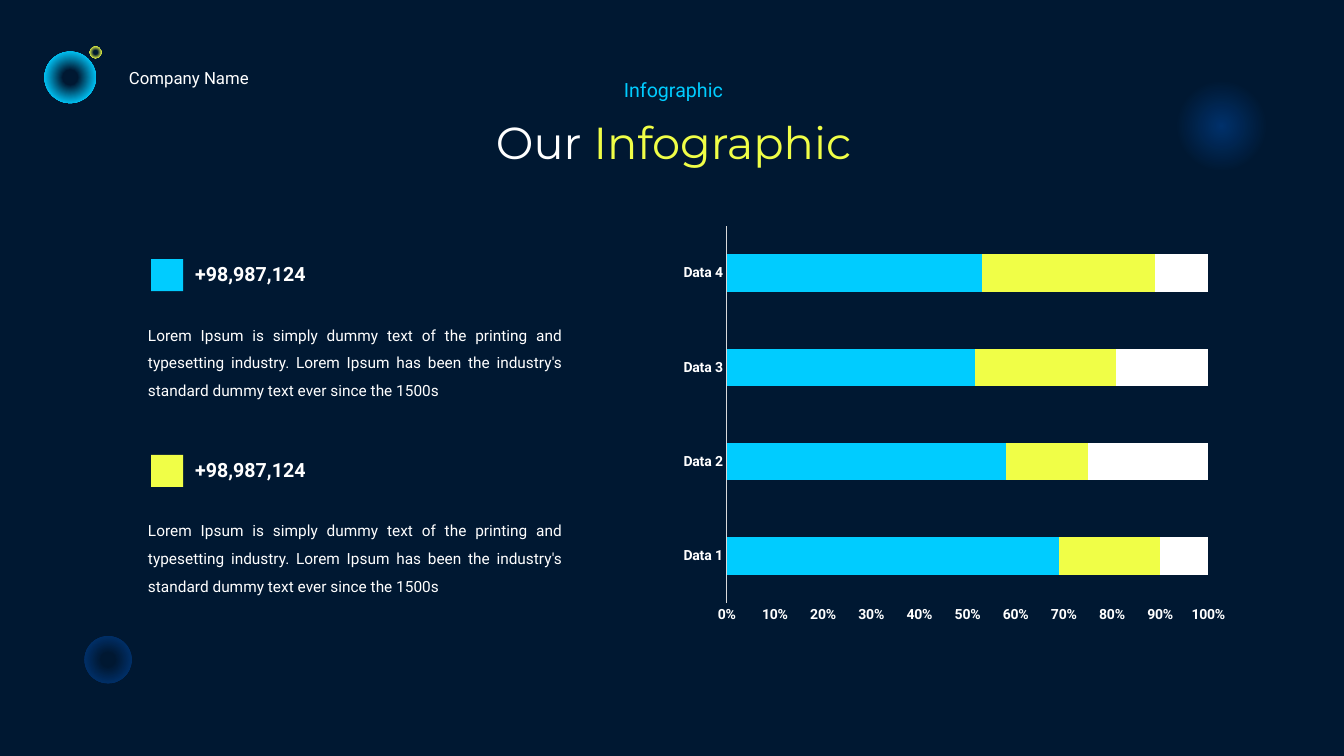
"""Builds the infographic slide with two key figures and a stacked bar chart."""
from pptx import Presentation
from pptx.chart.data import CategoryChartData
from pptx.dml.color import RGBColor
from pptx.enum.chart import XL_CHART_TYPE as ChartType, XL_TICK_MARK as TickMark
from pptx.enum.shapes import MSO_SHAPE as Shape
from pptx.enum.text import MSO_AUTO_SIZE as AutoSize, PP_ALIGN as Align
from pptx.oxml import parse_xml
from pptx.oxml.ns import nsdecls
from pptx.util import Cm, Pt

NAVY = RGBColor(0x00, 0x18, 0x32)
BLUE = RGBColor(0x00, 0x31, 0x6B)
CYAN = RGBColor(0x00, 0xCC, 0xFF)
YELLOW = RGBColor(0xF0, 0xFE, 0x47)
WHITE = RGBColor(0xFF, 0xFF, 0xFF)
GREY = RGBColor(0xD9, 0xD9, 0xD9)

FIGURE = "+98,987,124"
BLURB = (
    "Lorem Ipsum is simply dummy text of the printing and typesetting industry. "
    "Lorem Ipsum has been the industry's standard dummy text ever since the 1500s"
)
SERIES = [
    ("Series 1", (44, 21, 34, 33), CYAN),
    ("Series 2", (25, 37, 17, 20), CYAN),
    ("Series 3", (21, 17, 29, 36), YELLOW),
    ("Series 4", (10, 25, 19, 11), WHITE),
]


def write(paragraph, text, *, size, color=WHITE, font="Roboto", bold=False):
    """Add a formatted run to a paragraph."""
    run = paragraph.add_run()
    run.text = text
    run.font.size = Pt(size)
    run.font.name = font
    run.font.bold = bold
    run.font.color.rgb = color


class SlideBuilder:
    """Holds the current slide and draws its elements in one style."""

    def __init__(self, slide):
        self.slide = slide
        background = slide.background.fill
        background.solid()
        background.fore_color.rgb = NAVY

    def _shape(self, kind, left, top, side):
        shape = self.slide.shapes.add_shape(kind, Cm(left), Cm(top), Cm(side), Cm(side))
        shape.shadow.inherit = False
        shape.line.fill.background()
        return shape

    def swatch(self, left, top, side, color):
        """Draw a plain coloured square."""
        square = self._shape(Shape.RECTANGLE, left, top, side)
        square.fill.solid()
        square.fill.fore_color.rgb = color

    def orb(self, left, top, side, stops):
        """Draw a circle with a radial gradient of (percent, colour) stops."""
        circle = self._shape(Shape.OVAL, left, top, side)
        stop_xml = "".join(
            f'<a:gs pos="{percent * 1000}"><a:srgbClr val="{color}"/></a:gs>'
            for percent, color in stops
        )
        gradient = parse_xml(
            f'<a:gradFill {nsdecls("a")} rotWithShape="1"><a:gsLst>{stop_xml}</a:gsLst>'
            '<a:path path="circle"><a:fillToRect l="50000" t="50000" r="50000" b="50000"/>'
            "</a:path></a:gradFill>"
        )
        circle.element.spPr.insert(2, gradient)

    def text(self, left, top, width, height, *pieces, align=Align.LEFT, spacing=None, **style):
        """Place one paragraph of (text, colour) pieces."""
        box = self.slide.shapes.add_textbox(Cm(left), Cm(top), Cm(width), Cm(height))
        frame = box.text_frame
        frame.word_wrap = True
        frame.auto_size = AutoSize.SHAPE_TO_FIT_TEXT
        paragraph = frame.paragraphs[0]
        paragraph.alignment = align
        paragraph.line_spacing = spacing
        for words, color in pieces:
            write(paragraph, words, color=color, **style)

    def bars(self, left, top, width, height, categories, series):
        """Draw a 100% stacked bar chart."""
        shares = CategoryChartData()
        shares.categories = categories
        for name, values, _ in series:
            shares.add_series(name, values)
        chart = self.slide.shapes.add_chart(
            ChartType.BAR_STACKED_100, Cm(left), Cm(top), Cm(width), Cm(height), shares
        ).chart
        chart.has_legend = False
        chart.has_title = False
        chart.font.name = "Roboto"
        chart.font.size = Pt(10)
        chart.font.bold = True
        chart.font.color.rgb = WHITE

        plot = chart.plots[0]
        plot.gap_width = 150
        plot.overlap = 100
        plot.vary_by_categories = False
        for bar, (_, _, color) in zip(plot.series, series):
            bar.format.fill.solid()
            bar.format.fill.fore_color.rgb = color

        for axis in (chart.category_axis, chart.value_axis):
            axis.major_tick_mark = axis.minor_tick_mark = TickMark.NONE
            axis.has_major_gridlines = False
        chart.category_axis.format.line.color.rgb = GREY
        chart.category_axis.format.line.width = Pt(0.75)
        chart.value_axis.format.line.fill.background()
        chart.value_axis.tick_labels.number_format = "0%"
        chart.value_axis.tick_labels.number_format_is_linked = False


def main():
    """Build and save the slide."""
    deck = Presentation()
    deck.slide_width, deck.slide_height = Cm(33.87), Cm(19.05)
    page = SlideBuilder(deck.slides.add_slide(deck.slide_layouts[6]))

    categories = [f"Data {number}" for number in range(1, 5)]
    page.bars(16.94, 5.49, 14.22, 10.41, categories, SERIES)

    for top, color in ((6.53, CYAN), (11.46, YELLOW)):
        page.swatch(3.81, top, 0.81, color)
        page.text(4.67, top - 0.05, 4.32, 0.86, (FIGURE, WHITE), size=14, bold=True)
        page.text(3.48, top + 1.32, 10.95, 2.36, (BLURB, WHITE), size=11,
                  align=Align.JUSTIFY, spacing=1.5)

    for left, top, side, rim in (
        (1.12, 1.3, 1.3, CYAN),
        (2.26, 1.17, 0.3, YELLOW),
        (2.13, 16.03, 1.19, BLUE),
    ):
        page.orb(left, top, side, [(0, NAVY), (20, NAVY), (75, rim)])
    page.orb(29.39, 1.78, 2.79, [(0, BLUE), (59, NAVY)])

    page.text(3, 1.57, 4.57, 0.76, ("Company Name", WHITE), size=12)
    page.text(9.27, 2.77, 15.42, 1.63, ("Our ", WHITE), ("Infographic", YELLOW),
              size=32, font="Montserrat", align=Align.CENTER)
    page.text(14.53, 1.83, 4.88, 0.86, ("Infographic", CYAN), size=14, align=Align.CENTER)

    deck.save("out.pptx")


if __name__ == "__main__":
    main()
